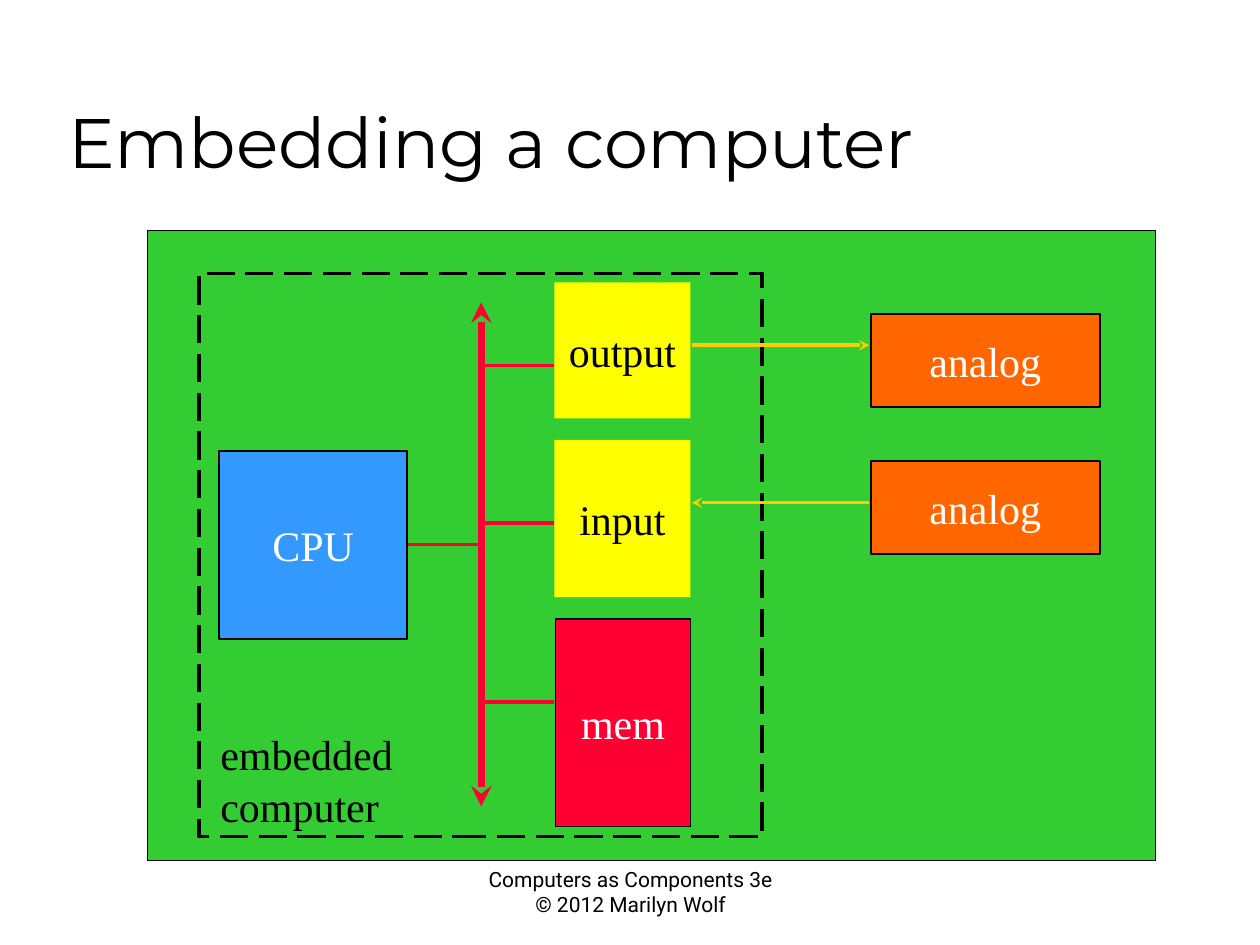
"""Build the slide on embedding a computer in a larger system."""
import pptx
import pptx.dml.color
import pptx.enum.dml
import pptx.enum.shapes
import pptx.enum.text
import pptx.oxml
import pptx.oxml.ns
import pptx.util

Inches = pptx.util.Inches
ALIGN = pptx.enum.text.PP_ALIGN
ANCHOR = pptx.enum.text.MSO_ANCHOR

THEME = {
    "black": "000000", "white": "FFFFFF", "system": "33CC33", "cpu": "3399FF",
    "bus": "FF0033", "device": "FFFF00", "analog": "FF6600", "signal": "FFCC00",
    "title_font": "Montserrat", "footer_font": "Roboto", "label_font": "Times New Roman",
    "title_size": 40, "footer_size": 12, "label_size": 24,
}

TITLE = "Embedding a computer"
FOOTER = ["Computers as Components 3e", "© 2012 Marilyn Wolf"]
CAPTION = ["embedded", "computer"]
SYSTEM_AREA = (1.17, 1.83, 8, 5)
COMPUTER_AREA = (1.58, 2.17, 4.47, 4.47)
CPU = ("CPU", (1.74, 3.58, 1.49, 1.49), "cpu", "white", "black")
MEMORY = ("mem", (4.41, 4.91, 1.07, 1.65), "bus", "white", "black")
INPUT = ("input", (4.4, 3.49, 1.08, 1.25), "device", "black", None)
OUTPUT = ("output", (4.4, 2.24, 1.08, 1.08), "device", "black", None)
ANALOGS = [("analog", (6.91, top, 1.82, 0.74), "analog", "white", "black")
           for top in (2.49, 3.66)]
BUS_X, BUS_TOP, BUS_BOTTOM = 3.82, 2.4, 6.4
CPU_EDGE, DEVICE_EDGE = 3.24, 4.4
CPU_TAP, DEVICE_TAPS = 4.32, (2.9, 4.15, 5.57)
SIGNAL_LEFT, SIGNAL_RIGHT, OUTPUT_Y, INPUT_Y = 5.49, 6.9, 2.74, 3.99


def color(name):
    return pptx.dml.color.RGBColor.from_string(THEME[name])


def write(frame, lines, role="label", ink="black", align=ALIGN.LEFT,
          anchor=ANCHOR.TOP, wrap=False, spacing=None):
    frame.word_wrap = wrap
    frame.vertical_anchor = anchor
    for index, text in enumerate(lines):
        para = frame.add_paragraph() if index else frame.paragraphs[0]
        para.alignment = align
        para.line_spacing = spacing
        span = para.add_run()
        span.text = text
        span.font.name = THEME[role + "_font"]
        span.font.size = pptx.util.Pt(THEME[role + "_size"])
        span.font.color.rgb = color(ink)


def add_text(slide, area, lines, **style):
    box = slide.shapes.add_textbox(*map(Inches, area))
    write(box.text_frame, lines, **style)


def add_box(slide, area, fill=None, line=None, width=1):
    box = slide.shapes.add_shape(pptx.enum.shapes.MSO_SHAPE.RECTANGLE, *map(Inches, area))
    box.shadow.inherit = False
    if fill:
        box.fill.solid()
        box.fill.fore_color.rgb = color(fill)
    else:
        box.fill.background()
    if line:
        box.line.color.rgb = color(line)
        box.line.width = pptx.util.Pt(width)
    else:
        box.line.fill.background()
    return box


def add_block(slide, block):
    label, area, fill, ink, line = block
    box = add_box(slide, area, fill, line)
    write(box.text_frame, [label], ink=ink, align=ALIGN.CENTER, anchor=ANCHOR.MIDDLE)


def add_line(slide, start, end, ink="bus", width=2, arrows=()):
    line = slide.shapes.add_connector(
        pptx.enum.shapes.MSO_CONNECTOR.STRAIGHT, *map(Inches, start + end))
    line.line.color.rgb = color(ink)
    line.line.width = pptx.util.Pt(width)
    outline = line.line._get_or_add_ln()
    for arrow in arrows:
        tip = pptx.oxml.ns.qn("a:" + arrow)
        outline.append(outline.makeelement(tip, {"type": "stealth"}))
    properties = line._element.spPr
    properties.append(properties.makeelement(pptx.oxml.ns.qn("a:effectLst"), {}))


def main():
    deck = pptx.Presentation()
    deck.slide_width, deck.slide_height = Inches(10), Inches(7.5)
    slide = deck.slides.add_slide(deck.slide_layouts[5])

    title = slide.shapes.title
    title.left, title.top, title.width, title.height = map(Inches, (0.44, 0.25, 8.5, 1.25))
    write(title.text_frame, [TITLE], role="title", anchor=ANCHOR.BOTTOM, wrap=True)
    add_text(slide, (3.67, 6.83, 2.67, 0.5), FOOTER, role="footer",
             align=ALIGN.CENTER, wrap=True)

    add_box(slide, SYSTEM_AREA, "system", "black", 0.75)
    for block in (CPU, MEMORY, INPUT, OUTPUT):
        add_block(slide, block)

    add_line(slide, (BUS_X, BUS_TOP), (BUS_X, BUS_BOTTOM), width=4,
             arrows=("headEnd", "tailEnd"))
    add_line(slide, (CPU_EDGE, CPU_TAP), (BUS_X, CPU_TAP))
    for tap in DEVICE_TAPS:
        add_line(slide, (BUS_X, tap), (DEVICE_EDGE, tap))

    computer = add_box(slide, COMPUTER_AREA, line="black", width=2)
    computer.line.dash_style = pptx.enum.dml.MSO_LINE.LONG_DASH

    signals = [(SIGNAL_LEFT, SIGNAL_RIGHT, OUTPUT_Y), (SIGNAL_RIGHT, SIGNAL_LEFT, INPUT_Y)]
    for start, end, height in signals:
        add_line(slide, (start, height), (end, height), "signal", arrows=("tailEnd",))
    for block in ANALOGS:
        add_block(slide, block)
    add_text(slide, (1.65, 5.71, 1.57, 0.9), CAPTION, spacing=1.05)

    deck.save("out.pptx")


if __name__ == "__main__":
    main()
